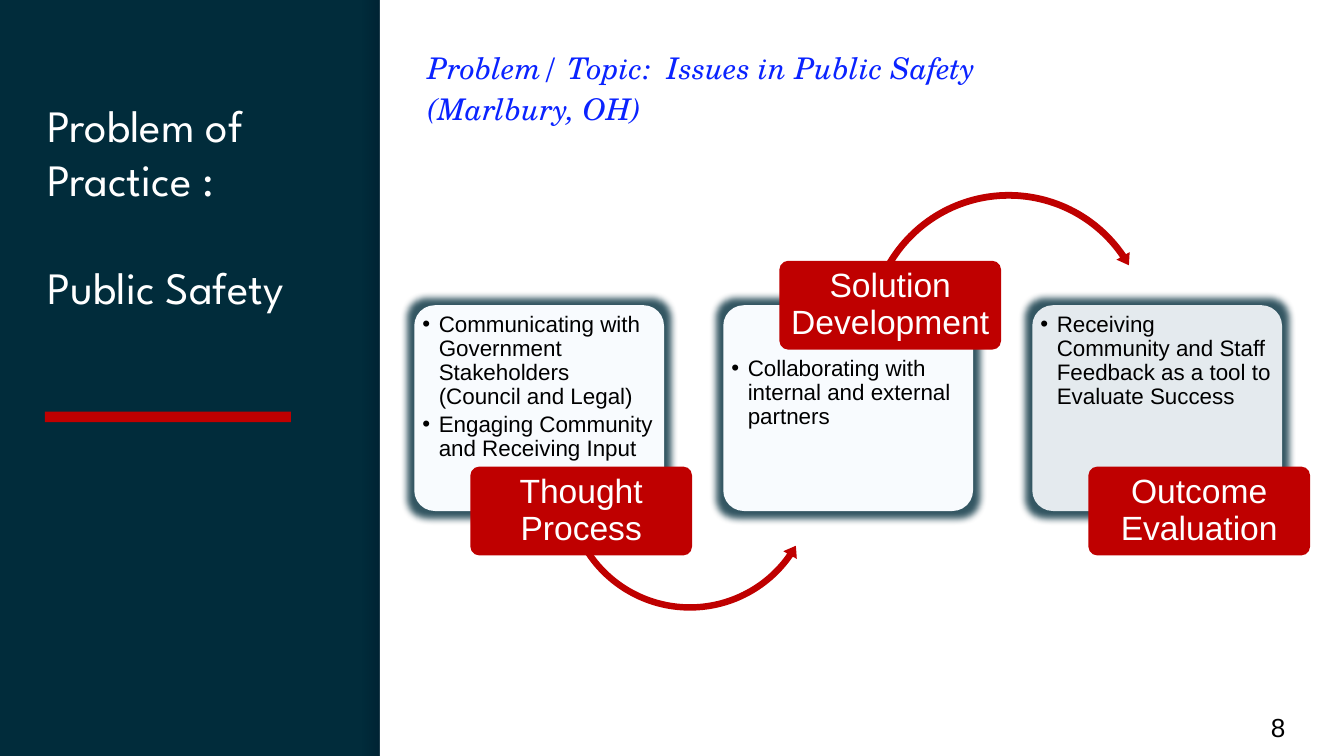
from dataclasses import dataclass
from typing import Optional

from lxml.etree import SubElement
from pptx import Presentation
from pptx.dml.color import RGBColor
from pptx.enum.shapes import MSO_SHAPE as Preset
from pptx.enum.text import MSO_ANCHOR as Anchor, PP_ALIGN as Align
from pptx.oxml.ns import qn
from pptx.util import Cm, Pt


@dataclass(frozen=True)
class Theme:
    navy: str = "012C3B"
    red: str = "BF0000"
    blue: str = "0A23FF"
    pale: str = "F8FBFE"
    shade: str = "000014"
    white: str = "FFFFFF"
    black: str = "000000"
    title_font: str = "League Spartan"
    topic_font: str = "TeX Gyre Schola"
    body_font: str = "Arial"
    title_size: float = 24
    label_size: float = 18
    topic_size: float = 16
    number_size: float = 14
    bullet_size: float = 12


@dataclass(frozen=True)
class Box:
    """A frame in centimetres."""
    left: float
    top: float
    width: float
    height: float

    def emu(self) -> tuple:
        return Cm(self.left), Cm(self.top), Cm(self.width), Cm(self.height)


@dataclass(frozen=True)
class Arc:
    preset: Preset
    box: Box
    adjustments: tuple


@dataclass(frozen=True)
class Stage:
    label: str
    points: tuple
    label_on_top: bool = False
    card_alpha: int = 100
    arc: Optional[Arc] = None


THEME = Theme()
CARD = Box(7.83, 5.77, 4.72, 3.89)
CARD_PITCH = 5.84
LABEL_SHIFT, LABEL_WIDTH, LABEL_HEIGHT = 1.06, 4.19, 1.68
LABEL_TOP_HIGH, LABEL_TOP_LOW = 4.93, 8.82
CORNER = 0.1
BULLET_INDENT = Cm(0.31)

STAGES = (
    Stage("Thought Process",
          ("Communicating with Government Stakeholders (Council and Legal)",
           "Engaging Community and Receiving Input"),
          arc=Arc(Preset.LEFT_CIRCULAR_ARROW, Box(10.59, 6.73, 4.9, 4.9),
                  (0.025, 3.094, 20.849, 90.245, 0.03))),
    Stage("Solution Development",
          ("Collaborating with internal and external partners",),
          label_on_top=True,
          arc=Arc(Preset.CIRCULAR_ARROW, Box(16.31, 3.55, 5.51, 5.51),
                  (0.023, 2.738, 195.507, 125.755, 0.026))),
    Stage("Outcome Evaluation",
          ("Receiving Community and Staff Feedback as a tool to Evaluate Success",),
          card_alpha=90),
)


def set_alpha(color_element, percent: int) -> None:
    SubElement(color_element, qn("a:alpha"), val=str(percent * 1000))


def add_block(slide, preset: Preset, box: Box, color: str):
    """Add a plain shape without outline or shadow."""
    block = slide.shapes.add_shape(preset, *box.emu())
    block.shadow.inherit = False
    block.fill.solid()
    block.fill.fore_color.rgb = RGBColor.from_string(color)
    block.line.fill.background()
    return block


def add_edge_shade(slide, box: Box) -> None:
    shade = add_block(slide, Preset.RECTANGLE, box, THEME.shade)
    shade.fill.gradient()
    shade.fill.gradient_angle = 0
    for stop in shade.fill.gradient_stops:
        stop.color.rgb = RGBColor.from_string(THEME.shade)
    colors = shade._element.spPr.findall(".//" + qn("a:srgbClr"))
    for color, alpha in zip(colors, (0, 20)):
        set_alpha(color, alpha)


def add_glow(block, color: str, radius: float, alpha: int) -> None:
    effects = block._element.spPr.find(qn("a:effectLst"))
    glow = SubElement(effects, qn("a:glow"), rad=str(Pt(radius)))
    set_alpha(SubElement(glow, qn("a:srgbClr"), val=color), alpha)


def add_bullet(paragraph) -> None:
    properties = paragraph._p.get_or_add_pPr()
    properties.set("marL", str(BULLET_INDENT))
    properties.set("indent", str(-BULLET_INDENT))
    SubElement(properties, qn("a:buFont"), typeface=THEME.body_font)
    SubElement(properties, qn("a:buChar"), char="•")


def write(holder, texts: tuple, font: str, size: float, color: str, *,
          inset: tuple = (0.25, 0.25), top_inset: Optional[float] = None,
          anchor: Anchor = Anchor.TOP, align: Align = Align.LEFT,
          line_spacing: float = 1.0, gap: float = 0,
          italic: bool = False, bullets: bool = False) -> None:
    """Write one paragraph per text; gap is the space in points between them."""
    frame = holder.text_frame
    frame.word_wrap = True
    frame.vertical_anchor = anchor
    frame.margin_left = frame.margin_right = Cm(inset[0])
    frame.margin_top = frame.margin_bottom = Cm(inset[1])
    if top_inset is not None:
        frame.margin_top = Cm(top_inset)
    for index, text in enumerate(texts):
        paragraph = frame.add_paragraph() if index else frame.paragraphs[0]
        paragraph.text = text
        paragraph.alignment = align
        paragraph.line_spacing = line_spacing
        if index:
            paragraph.space_before = Pt(gap)
        if bullets:
            add_bullet(paragraph)
        paragraph.font.name = font
        paragraph.font.size = Pt(size)
        paragraph.font.italic = italic
        paragraph.font.color.rgb = RGBColor.from_string(color)


def add_stage(slide, stage: Stage, left: float) -> None:
    card = add_block(slide, Preset.ROUNDED_RECTANGLE,
                     Box(left, CARD.top, CARD.width, CARD.height), THEME.pale)
    card.adjustments[0] = CORNER
    if stage.card_alpha < 100:
        set_alpha(card._element.spPr.find(".//" + qn("a:srgbClr")), stage.card_alpha)
    add_glow(card, THEME.navy, radius=8, alpha=80)
    write(card, stage.points, THEME.body_font, THEME.bullet_size, THEME.black,
          inset=(0.04, 0.04), top_inset=0.86 if stage.label_on_top else 0.03,
          line_spacing=0.9, gap=2, bullets=True)

    if stage.arc:
        arc = add_block(slide, stage.arc.preset, stage.arc.box, THEME.red)
        for index, value in enumerate(stage.arc.adjustments):
            arc.adjustments[index] = value

    label_top = LABEL_TOP_HIGH if stage.label_on_top else LABEL_TOP_LOW
    label = add_block(slide, Preset.ROUNDED_RECTANGLE,
                      Box(left + LABEL_SHIFT, label_top, LABEL_WIDTH, LABEL_HEIGHT),
                      THEME.red)
    label.adjustments[0] = CORNER
    write(label, (stage.label,), THEME.body_font, THEME.label_size, THEME.white,
          inset=(0.1, 0.07), anchor=Anchor.MIDDLE, align=Align.CENTER,
          line_spacing=0.9)


def main() -> None:
    deck = Presentation()
    deck.slide_width, deck.slide_height = Cm(25.4), Cm(14.29)
    slide = deck.slides.add_slide(deck.slide_layouts[6])
    slide.background.fill.solid()
    slide.background.fill.fore_color.rgb = RGBColor.from_string(THEME.navy)

    add_edge_shade(slide, Box(6.86, 0, 0.32, 14.29))
    add_block(slide, Preset.RECTANGLE, Box(7.18, 0, 18.22, 14.29), THEME.white)

    title = slide.shapes.add_textbox(*Box(0.65, 1.6, 5.69, 11.05).emu())
    write(title, ("Problem of Practice :", "Public Safety"),
          THEME.title_font, THEME.title_size, THEME.white, gap=29)
    topic = slide.shapes.add_textbox(*Box(7.83, 0.58, 13.34, 3.35).emu())
    write(topic, ("Problem/ Topic:  Issues in Public Safety (Marlbury, OH)",),
          THEME.topic_font, THEME.topic_size, THEME.blue,
          line_spacing=1.15, italic=True)
    page_number = slide.shapes.add_textbox(*Box(23.77, 13.19, 1.52, 1.09).emu())
    write(page_number, ("8",), THEME.body_font, THEME.number_size, THEME.black,
          anchor=Anchor.MIDDLE)

    for index, stage in enumerate(STAGES):
        add_stage(slide, stage, CARD.left + index * CARD_PITCH)
    add_block(slide, Preset.RECTANGLE, Box(0.85, 7.78, 4.65, 0.2), THEME.red)

    deck.save("out.pptx")


if __name__ == "__main__":
    main()
